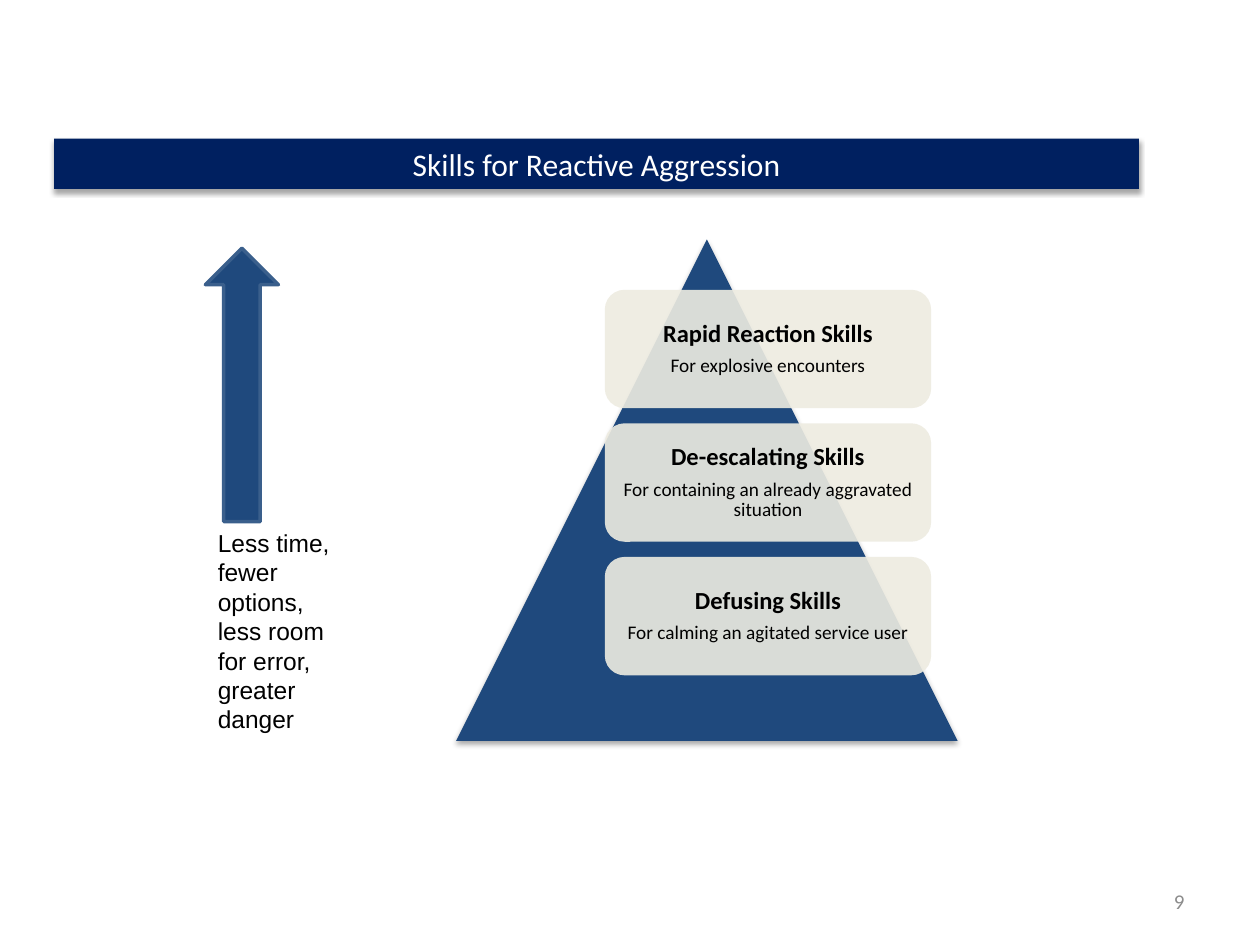
from lxml import etree
from pptx import Presentation
from pptx.dml.color import RGBColor
from pptx.enum.shapes import MSO_SHAPE
from pptx.enum.text import MSO_ANCHOR, MSO_AUTO_SIZE, PP_ALIGN
from pptx.oxml import parse_xml
from pptx.oxml.ns import nsdecls, qn
from pptx.util import Inches, Pt

LEFT, CENTER, RIGHT = PP_ALIGN.LEFT, PP_ALIGN.CENTER, PP_ALIGN.RIGHT
TOP, MIDDLE = MSO_ANCHOR.TOP, MSO_ANCHOR.MIDDLE

COLORS = {"navy": "002060", "blue": "1F497D", "outline": "3A5F8C", "cream": "EEECE1",
          "black": "000000", "white": "FFFFFF", "gray": "8C8C8C"}

TITLE = "Skills for Reactive Aggression"
WARNING = "Less time, fewer options, less room for error, greater danger"
PAGE_NUMBER = "9"
SKILLS = [
    ("Rapid Reaction Skills", "For explosive encounters"),
    ("De-escalating Skills", "For containing an already aggravated situation"),
    ("Defusing Skills", "For calming an agitated service user"),
]

CARD_LEFT, CARD_TOP, CARD_WIDTH, CARD_HEIGHT, CARD_PITCH = 4.8, 2.3, 2.59, 0.94, 1.06
CARD_INSET = 0.06
HEADING = {"size": Pt(14), "bold": True, "name": "Calibri"}
DETAIL = {"size": Pt(11), "bold": False, "name": "Calibri"}
CARD_SPACING = {"alignment": CENTER, "line_spacing": 0.9, "space_after": Pt(5)}

SHADOW = (f'<a:effectLst {nsdecls("a")}><a:outerShdw blurRad="{Pt(3.1)}" dist="{Pt(1.8)}" '
          'dir="5400000" rotWithShape="0"><a:srgbClr val="000000"><a:alpha val="35000"/>'
          '</a:srgbClr></a:outerShdw></a:effectLst>')


def rgb(name):
    return RGBColor.from_string(COLORS[name])


def apply(target, values):
    for name, value in values.items():
        setattr(target, name, value)


def place(box, left, top, width, height):
    apply(box, {"left": Inches(left), "top": Inches(top),
                "width": Inches(width), "height": Inches(height)})


def paint(box, color):
    box.fill.solid()
    box.fill.fore_color.rgb = rgb(color)


def add_figure(page, kind, area, color):
    figure = page.shapes.add_shape(kind, *map(Inches, area))
    figure.shadow.inherit = False
    paint(figure, color)
    figure.line.fill.background()
    return figure


def cast_shadow(box):
    properties = box._element.spPr
    for effects in properties.findall(qn("a:effectLst")):
        properties.remove(effects)
    properties.append(parse_xml(SHADOW))


def set_opacity(box, percent):
    color = box._element.spPr.find(qn("a:solidFill"))[0]
    etree.SubElement(color, qn("a:alpha")).set("val", str(percent * 1000))


def write(para, text, font, color, spacing):
    span = para.add_run()
    span.text = text
    apply(span.font, font)
    span.font.color.rgb = rgb(color)
    apply(para, spacing)


def add_label(page, area, text, font, color, alignment, anchor):
    box = page.shapes.add_textbox(*map(Inches, area))
    apply(box.text_frame, {"word_wrap": True, "vertical_anchor": anchor})
    write(box.text_frame.paragraphs[0], text, font, color, {"alignment": alignment})


def add_card(page, index, heading, detail):
    top = CARD_TOP + index * CARD_PITCH
    card = add_figure(page, MSO_SHAPE.ROUNDED_RECTANGLE,
                      (CARD_LEFT, top, CARD_WIDTH, CARD_HEIGHT), "cream")
    set_opacity(card, 90)
    frame = card.text_frame
    apply(frame, {"word_wrap": True, "vertical_anchor": MIDDLE})
    for side in ("left", "right", "top", "bottom"):
        setattr(frame, f"margin_{side}", Inches(CARD_INSET))
    write(frame.paragraphs[0], heading, HEADING, "black", CARD_SPACING)
    write(frame.add_paragraph(), detail, DETAIL, "black", CARD_SPACING)


def main():
    deck = Presentation()
    deck.slide_width, deck.slide_height = Inches(10), Inches(7.5)
    page = deck.slides.add_slide(deck.slide_layouts[5])

    title = page.shapes.title
    place(title, 0.43, 1.1, 8.61, 0.4)
    paint(title, "navy")
    cast_shadow(title)
    apply(title.text_frame, {"auto_size": MSO_AUTO_SIZE.NONE, "vertical_anchor": MIDDLE})
    write(title.text_frame.paragraphs[0], TITLE, {"size": Pt(18), "name": "Calibri"},
          "white", {"alignment": CENTER})

    pyramid = add_figure(page, MSO_SHAPE.ISOSCELES_TRIANGLE, (3.62, 1.9, 3.98, 3.98), "blue")
    cast_shadow(pyramid)
    for index, (heading, detail) in enumerate(SKILLS):
        add_card(page, index, heading, detail)

    arrow = add_figure(page, MSO_SHAPE.UP_ARROW, (1.63, 1.97, 0.58, 2.17), "blue")
    arrow.line.color.rgb = rgb("outline")
    arrow.line.width = Pt(2)
    add_label(page, (1.63, 4.14, 1.19, 1.75), WARNING,
              {"size": Pt(14), "name": "Arial"}, "black", LEFT, TOP)
    add_label(page, (7.17, 6.95, 2.33, 0.4), PAGE_NUMBER,
              {"size": Pt(12), "name": "Calibri"}, "gray", RIGHT, MIDDLE)

    deck.save("out.pptx")


if __name__ == "__main__":
    main()
